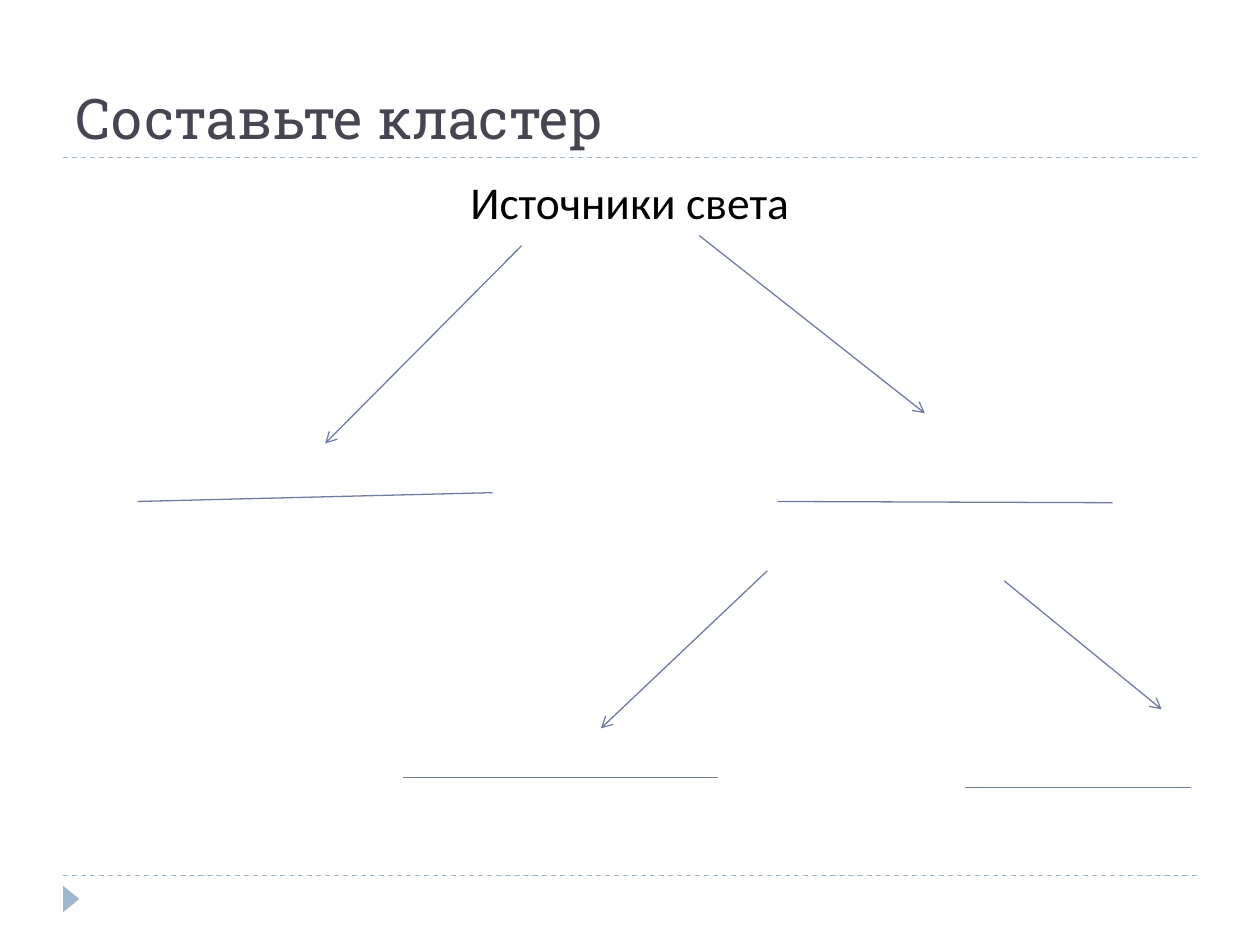
from typing import NamedTuple

from lxml import etree
from pptx import Presentation
from pptx import util as u
from pptx.dml.color import RGBColor
from pptx.enum import dml, shapes, text
from pptx.oxml.ns import qn

PX = u.Inches(1) // 100

TITLE_COLOR = RGBColor(0x46, 0x46, 0x53)
BODY_COLOR = RGBColor(0, 0, 0)
FRAME_COLOR = RGBColor(0x9F, 0xB8, 0xCD)
BRANCH_COLOR = RGBColor(0x72, 0x7C, 0xA3)


class Segment(NamedTuple):
    x1: int
    y1: int
    x2: int
    y2: int


RULES = [Segment(50, y, 950, y) for y in (695, 125)]
ARROWS = [
    Segment(414, 195, 258, 352),
    Segment(555, 187, 734, 328),
    Segment(609, 453, 477, 578),
    Segment(797, 461, 922, 563),
]
BLANKS = [
    Segment(109, 398, 391, 391),
    Segment(617, 398, 883, 399),
    Segment(320, 617, 570, 617),
    Segment(766, 625, 945, 625),
]


def set_values(target, values: dict) -> None:
    for name, value in values.items():
        setattr(target, name, value)


def place(shape, left: int, top: int, width: int, height: int) -> None:
    set_values(shape, {"left": left * PX, "top": top * PX,
                       "width": width * PX, "height": height * PX})


def draw_line(slide, segment: Segment, color: RGBColor,
              dashed: bool = False, arrow: bool = False) -> None:
    connector = slide.shapes.add_connector(
        shapes.MSO_CONNECTOR.STRAIGHT, *(value * PX for value in segment))
    line = connector.line
    line.color.rgb = color
    line.width = u.Pt(0.75)
    if dashed:
        line.dash_style = dml.MSO_LINE.DASH
    properties = connector._element.spPr
    if arrow:
        etree.SubElement(properties.find(qn("a:ln")), qn("a:tailEnd"), type="arrow")
    etree.SubElement(properties, qn("a:effectLst"))


def write_text(frame, wording: str, font: dict, color: RGBColor,
               paragraph_format: dict, frame_format: dict) -> None:
    set_values(frame, {"word_wrap": True, "auto_size": text.MSO_AUTO_SIZE.NONE,
                       **frame_format})
    paragraph = frame.paragraphs[0]
    set_values(paragraph, paragraph_format)
    run = paragraph.add_run()
    run.text = wording
    set_values(run.font, font)
    run.font.color.rgb = color


def draw_marker(slide) -> None:
    marker = slide.shapes.add_shape(
        shapes.MSO_SHAPE.ISOSCELES_TRIANGLE, 46 * PX, 707 * PX, 21 * PX, 13 * PX)
    marker.rotation = 90
    marker.shadow.inherit = False
    marker.fill.solid()
    marker.fill.fore_color.rgb = FRAME_COLOR
    marker.line.fill.background()


def main() -> None:
    presentation = Presentation()
    set_values(presentation, {"slide_width": 1000 * PX, "slide_height": 750 * PX})
    slide = presentation.slides.add_slide(presentation.slide_layouts[5])

    for rule in RULES:
        draw_line(slide, rule, FRAME_COLOR, dashed=True)
    draw_marker(slide)

    title = slide.shapes.title
    place(title, 50, 17, 900, 108)
    write_text(title.text_frame, "Составьте кластер",
               {"name": "Roboto Slab", "size": u.Pt(32)}, TITLE_COLOR,
               {"alignment": text.PP_ALIGN.LEFT},
               {"vertical_anchor": text.MSO_ANCHOR.BOTTOM})

    topic = slide.shapes.add_textbox(50 * PX, 133 * PX, 900 * PX, 540 * PX)
    write_text(topic.text_frame, "Источники света",
               {"name": "Calibri", "size": u.Pt(26)}, BODY_COLOR,
               {"alignment": text.PP_ALIGN.CENTER, "space_before": u.Pt(6)},
               {"vertical_anchor": text.MSO_ANCHOR.TOP})

    for arrow in ARROWS:
        draw_line(slide, arrow, BRANCH_COLOR, arrow=True)
    for blank in BLANKS:
        draw_line(slide, blank, BRANCH_COLOR)

    presentation.save("out.pptx")


if __name__ == "__main__":
    main()
